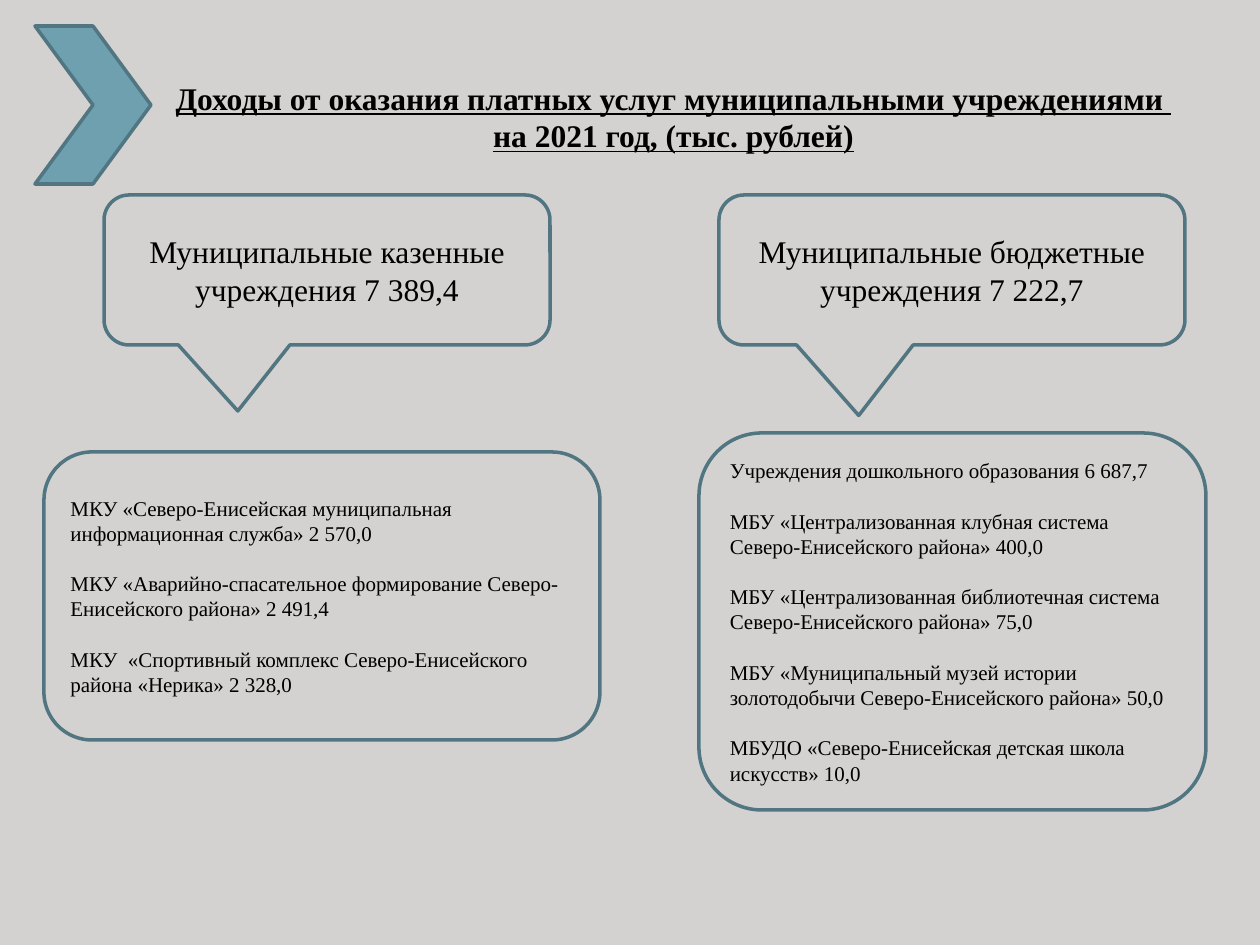
from pptx import Presentation
from pptx.dml.color import RGBColor
from pptx.enum.shapes import MSO_SHAPE as Shape
from pptx.enum.text import MSO_ANCHOR as Anchor, MSO_AUTO_SIZE as AutoSize, PP_ALIGN as Align
from pptx.util import Pt

EMU_PER_PX = 914400 / 126
FONT = "Times New Roman"
COLORS = {"back": "D4D2D0", "outline": "517682", "accent": "6EA0B0", "text": "000000"}

STATE_ITEMS = [
    "МКУ «Северо-Енисейская муниципальная информационная служба» 2 570,0",
    "МКУ «Аварийно-спасательное формирование Северо-Енисейского района» 2 491,4",
    "МКУ  «Спортивный комплекс Северо-Енисейского района «Нерика» 2 328,0",
]
BUDGET_ITEMS = [
    "Учреждения дошкольного образования 6 687,7",
    "МБУ «Централизованная клубная система Северо-Енисейского района» 400,0",
    "МБУ «Централизованная библиотечная система Северо-Енисейского района» 75,0",
    "МБУ «Муниципальный музей истории золотодобычи Северо-Енисейского района» 50,0",
    "МБУДО «Северо-Енисейская детская школа искусств» 10,0",
]


def px(length):
    """Turn pixels into EMU."""
    return round(length * EMU_PER_PX)


def color(name):
    """Look up a palette colour."""
    return RGBColor.from_string(COLORS[name])


def add_run(paragraph, wording, size, strong=False):
    """Append a formatted run; strong means bold and underlined."""
    run = paragraph.add_run()
    run.text = wording
    font = run.font
    font.name, font.size = FONT, Pt(size)
    font.bold = font.underline = strong
    font.color.rgb = color("text")


def add_outlined(slide, preset, box, fill="back"):
    """Add an outlined preset shape in the given pixel box."""
    shape = slide.shapes.add_shape(preset, *map(px, box))
    shape.shadow.inherit = False
    shape.fill.solid()
    shape.fill.fore_color.rgb = color(fill)
    shape.line.color.rgb = color("outline")
    shape.line.width = Pt(2)
    return shape


def write_paragraphs(shape, wordings, size, align, gap=0):
    """Fill a shape with paragraphs set apart by a gap in points."""
    frame = shape.text_frame
    frame.word_wrap = True
    frame.vertical_anchor = Anchor.MIDDLE
    for index, wording in enumerate(wordings):
        paragraph = frame.add_paragraph() if index else frame.paragraphs[0]
        paragraph.alignment = align
        paragraph.space_before = Pt(gap if index else 0)
        add_run(paragraph, wording, size)


def place_title(slide, box, lines):
    """Move the title placeholder into its box and write its lines."""
    title = slide.shapes.title
    title.left, title.top, title.width, title.height = map(px, box)
    frame = title.text_frame
    frame.word_wrap = True
    frame.auto_size = AutoSize.NONE
    frame.vertical_anchor = Anchor.MIDDLE
    heading = frame.paragraphs[0]
    heading.alignment = Align.CENTER
    for index, line in enumerate(lines):
        if index:
            heading.add_line_break()
        add_run(heading, line, 18, strong=True)


def add_total(slide, box, wording, pointer):
    """Add a callout with a group's total, its tip at the given ratios."""
    callout = add_outlined(slide, Shape.ROUNDED_RECTANGULAR_CALLOUT, box)
    for index, ratio in enumerate((*pointer, 0.167)):
        callout.adjustments[index] = ratio
    write_paragraphs(callout, [wording], 18, Align.CENTER)


def add_institutions(slide, box, preset, items):
    """Add a rounded panel listing institutions and their income."""
    panel = add_outlined(slide, preset, box)
    write_paragraphs(panel, items, 12, Align.LEFT, gap=14.4)


def main():
    """Build and save the slide."""
    deck = Presentation()
    deck.slide_width, deck.slide_height = px(1260), px(945)
    slide = deck.slides.add_slide(deck.slide_layouts[5])
    slide.background.fill.solid()
    slide.background.fill.fore_color.rgb = color("back")

    place_title(slide, (150, 38, 1047, 157), [
        "Доходы от оказания платных услуг муниципальными учреждениями ",
        "на 2021 год, (тыс. рублей)",
    ])
    add_total(slide, (104, 195, 446, 150),
              "Муниципальные казенные учреждения 7 389,4", (-0.2, 0.94))
    add_institutions(slide, (44, 452, 556, 288),
                     Shape.FLOWCHART_ALTERNATE_PROCESS, STATE_ITEMS)
    add_total(slide, (719, 195, 466, 150),
              "Муниципальные бюджетные учреждения 7 222,7", (-0.2, 0.97))
    add_institutions(slide, (699, 433, 507, 377),
                     Shape.ROUNDED_RECTANGLE, BUDGET_ITEMS)
    add_outlined(slide, Shape.CHEVRON, (35, 26, 116, 158), "accent")
    deck.save("out.pptx")


if __name__ == "__main__":
    main()
